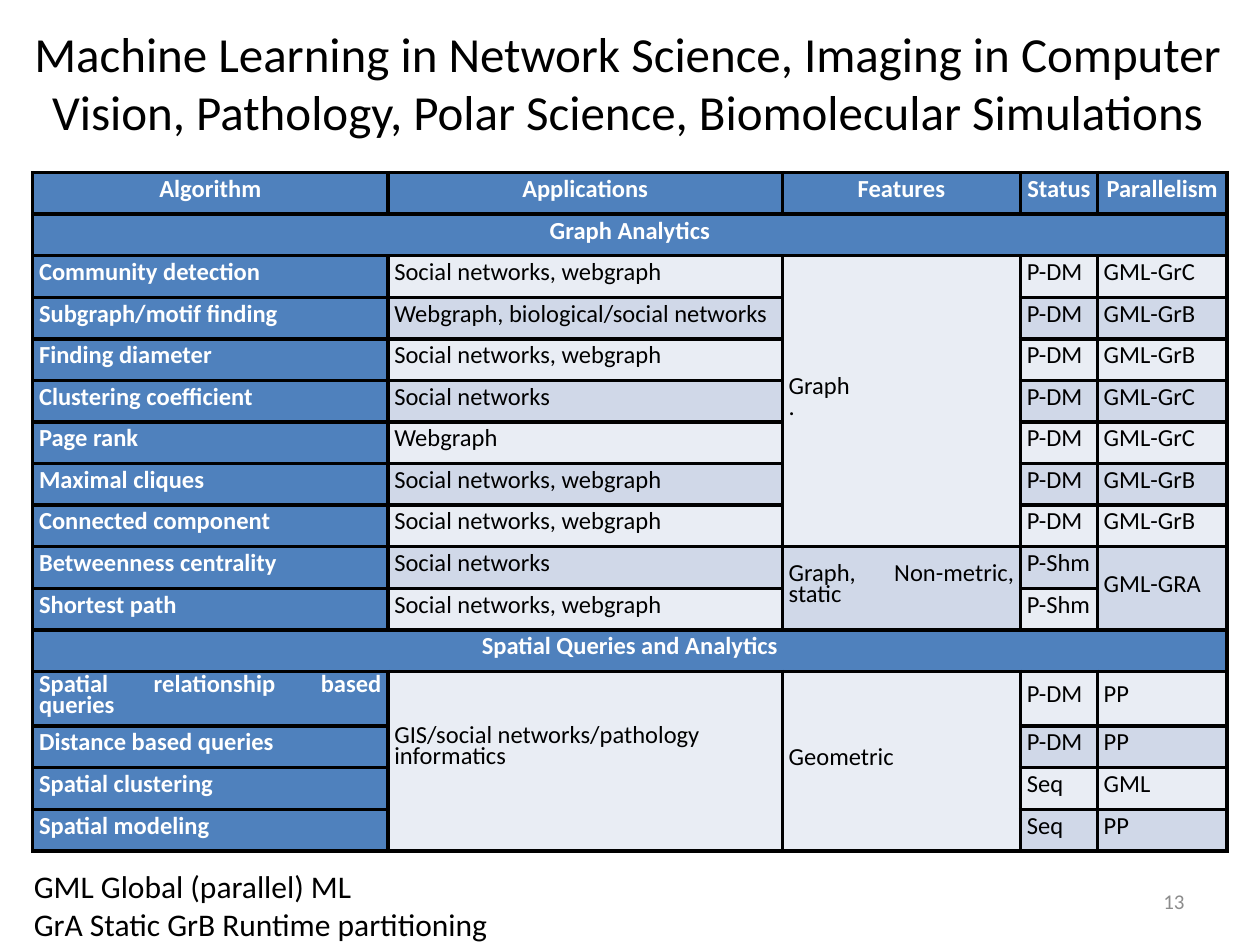
from lxml import etree
from pptx import Presentation
from pptx.dml.color import RGBColor as RGB
from pptx.enum.text import MSO_ANCHOR as Anchor, PP_ALIGN as Align
from pptx.oxml.ns import qn
from pptx.util import Inches, Pt

COLORS = {"text": "000000", "inverse": "FFFFFF", "number": "8C8C8C", "border": "000000",
          "header": "4F81BD", "light": "E9EDF4", "dark": "D0D8E8"}
COL_WIDTHS = [2.82, 3.13, 1.89, 0.61, 1.03]
ROW_HEIGHT = 0.33
CELL_MARGIN = 0.05

# A one-item row is a section heading; None continues the cell above.
ROWS = [
    ["Algorithm", "Applications", "Features", "Status", "Parallelism"],
    ["Graph Analytics"],
    ["Community detection", "Social networks, webgraph", "Graph\n.", "P-DM", "GML-GrC"],
    ["Subgraph/motif finding", "Webgraph, biological/social networks", None, "P-DM", "GML-GrB"],
    ["Finding diameter", "Social networks, webgraph", None, "P-DM", "GML-GrB"],
    ["Clustering coefficient", "Social networks", None, "P-DM", "GML-GrC"],
    ["Page rank", "Webgraph", None, "P-DM", "GML-GrC"],
    ["Maximal cliques", "Social networks, webgraph", None, "P-DM", "GML-GrB"],
    ["Connected component", "Social networks, webgraph", None, "P-DM", "GML-GrB"],
    ["Betweenness centrality", "Social networks", "Graph, Non-metric, static", "P-Shm", "GML-GRA"],
    ["Shortest path", "Social networks, webgraph", None, "P-Shm", None],
    ["Spatial Queries and Analytics"],
    ["Spatial relationship based queries", "GIS/social networks/pathology informatics",
     "Geometric", "P-DM", "PP"],
    ["Distance based queries", None, None, "P-DM", "PP"],
    ["Spatial clustering", None, None, "Seq", "GML"],
    ["Spatial modeling", None, None, "Seq", "PP"],
]


class SlideBuilder:
    font = "Calibri"

    def __init__(self, slide):
        self.slide = slide

    def fill_text(self, tf, text, size, color="text", align=Align.LEFT, bold=False,
                  spacing=None):
        tf.text = text
        for p in tf.paragraphs:
            p.alignment = align
            if spacing:
                p.line_spacing = spacing
            for r in p.runs:
                r.font.name = self.font
                r.font.size = Pt(size)
                r.font.bold = bold
                r.font.color.rgb = RGB.from_string(COLORS[color])

    def text(self, box, text, size, anchor=Anchor.TOP, **style):
        sp = self.slide.shapes.add_textbox(*map(Inches, box))
        tf = sp.text_frame
        tf.word_wrap = True
        tf.vertical_anchor = anchor
        self.fill_text(tf, text, size, **style)

    def border(self, cell):
        tc_pr = cell._tc.get_or_add_tcPr()
        for side in ("lnL", "lnR", "lnT", "lnB"):
            ln = etree.SubElement(tc_pr, qn("a:" + side), w=str(Pt(2.25)))
            fill = etree.SubElement(ln, qn("a:solidFill"))
            etree.SubElement(fill, qn("a:srgbClr"), val=COLORS["border"])

    def cell(self, cell, text, fill, **style):
        self.border(cell)
        cell.fill.solid()
        cell.fill.fore_color.rgb = RGB.from_string(COLORS[fill])
        cell.vertical_anchor = Anchor.MIDDLE
        cell.margin_left = cell.margin_right = Inches(CELL_MARGIN)
        cell.margin_top = cell.margin_bottom = Inches(CELL_MARGIN)
        if text:
            self.fill_text(cell.text_frame, text, 14, spacing=Pt(12), **style)

    def table(self, left, top, rows):
        n_cols = len(COL_WIDTHS)
        frame = self.slide.shapes.add_table(
            len(rows), n_cols, Inches(left), Inches(top),
            Inches(sum(COL_WIDTHS)), Inches(ROW_HEIGHT * len(rows)))
        table = frame.table
        for column, width in zip(table.columns, COL_WIDTHS):
            column.width = Inches(width)
        for i, row in enumerate(rows):
            table.rows[i].height = Inches(ROW_HEIGHT)
            section = len(row) == 1
            heading = i == 0 or section
            for j, text in enumerate(row + [None] * (n_cols - len(row))):
                strong = heading or j == 0
                band = "dark" if i % 2 else "light"
                self.cell(table.cell(i, j), text, "header" if strong else band,
                          color="inverse" if strong else "text", bold=strong,
                          align=Align.CENTER if heading else Align.JUSTIFY)
            if section:
                table.cell(i, 0).merge(table.cell(i, n_cols - 1))
        self.merge_down(table, rows)
        return table

    def merge_down(self, table, rows):
        """Join each cell with the None entries directly below it."""
        for j in range(len(COL_WIDTHS)):
            for i, row in enumerate(rows):
                if j >= len(row) or row[j] is None:
                    continue
                end = i
                while end + 1 < len(rows) and rows[end + 1][j:j + 1] == [None]:
                    end += 1
                if end > i:
                    table.cell(i, j).merge(table.cell(end, j))


def main():
    prs = Presentation()
    prs.slide_width, prs.slide_height = Inches(10), Inches(7.5)
    s = SlideBuilder(prs.slides.add_slide(prs.slide_layouts[6]))

    s.text((0.02, 0.03, 9.92, 1.24),
           "Machine Learning in Network Science, Imaging in Computer Vision, "
           "Pathology, Polar Science, Biomolecular Simulations",
           28, Anchor.MIDDLE, align=Align.CENTER)
    s.text((7.17, 6.95, 2.33, 0.4), "13", 12, Anchor.MIDDLE,
           color="number", align=Align.RIGHT)

    table = s.table(0.26, 1.37, ROWS)
    gis = table.cell(12, 1)
    gis.margin_bottom = Inches(0.22)  # lifts the text by half a line
    gis.text_frame.paragraphs[0].alignment = Align.LEFT

    s.text((0.17, 6.83, 3.92, 0.71),
           "GML Global (parallel) ML\nGrA Static GrB Runtime partitioning", 18)
    prs.save("out.pptx")


if __name__ == "__main__":
    main()
